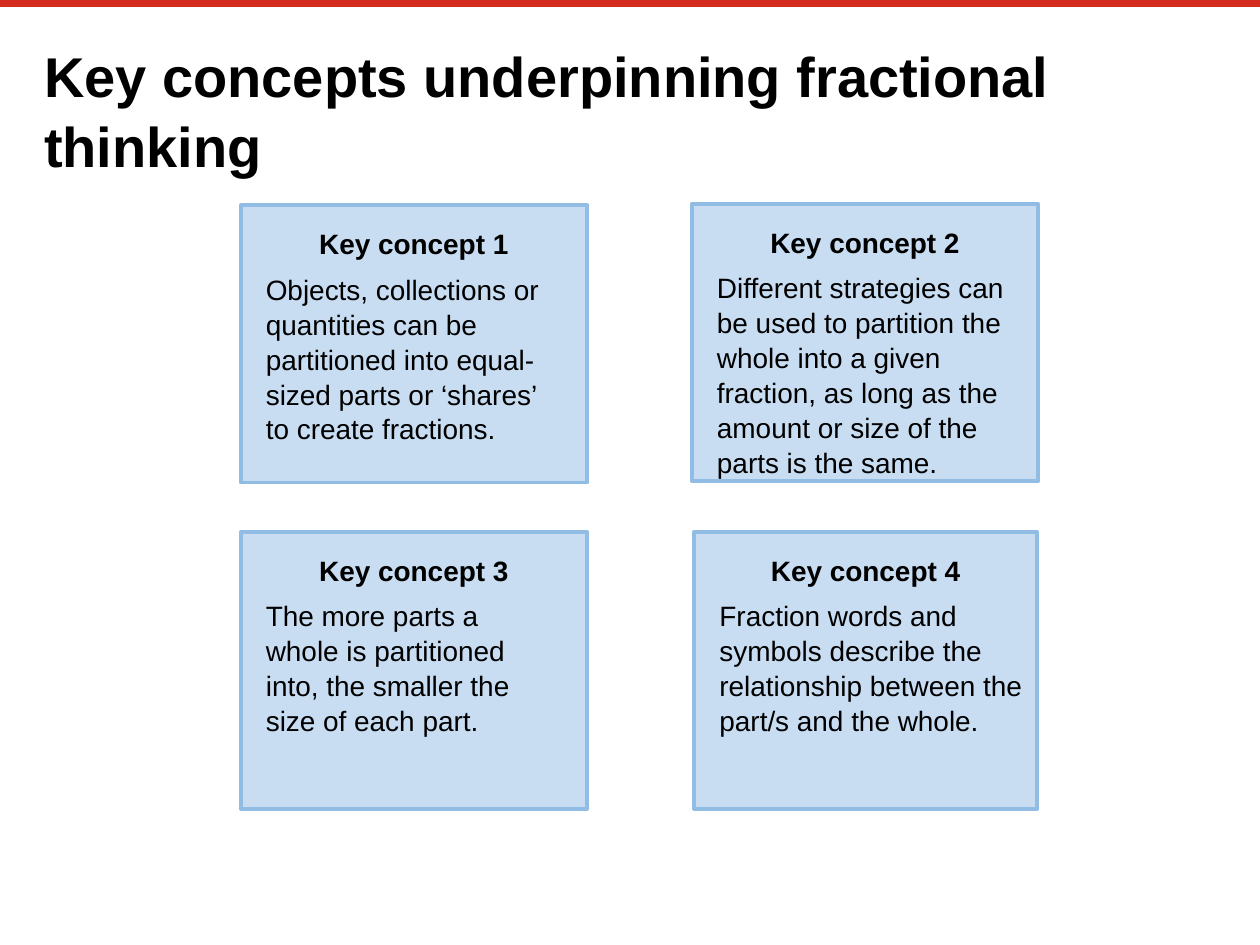
import pptx
import pptx.util
import pptx.dml.color
import pptx.enum.shapes
import pptx.enum.text
from lxml import etree
from pptx.util import Inches

RGBColor = pptx.dml.color.RGBColor
RED = RGBColor(0xD5, 0x2B, 0x1E)
PALE_BLUE = RGBColor(0xC8, 0xDD, 0xF2)
EDGE_BLUE = RGBColor(0x91, 0xBC, 0xE4)
BLACK = RGBColor(0, 0, 0)

FONT = "Arial"
LINE_SPACING = 1.04
A = "{http://schemas.openxmlformats.org/drawingml/2006/main}"

# Left, top, width, height and text of each key concept
BOX_H = 2.2
CONCEPTS = [
    ((1.91, 1.63, 2.75, BOX_H),
     "Objects, collections or quantities can be partitioned into "
     "equal-sized parts or ‘shares’\nto create fractions."),
    ((5.49, 1.62, 2.75, BOX_H),
     "Different strategies can be used to partition the whole into a given "
     "fraction, as long as the amount or size of the parts is the same."),
    ((1.91, 4.22, 2.75, BOX_H),
     "The more parts a\nwhole is partitioned\ninto, the smaller the\n"
     "size of each part."),
    ((5.51, 4.22, 2.72, BOX_H),
     "Fraction words and symbols describe the relationship between the "
     "part/s and the whole."),
]


def place(s, box):
    s.left, s.top, s.width, s.height = (Inches(v) for v in box)


def set_frame(tf, top_inset):
    tf.word_wrap = True
    tf.auto_size = pptx.enum.text.MSO_AUTO_SIZE.NONE
    tf.vertical_anchor = pptx.enum.text.MSO_ANCHOR.TOP
    tf.margin_left = tf.margin_right = tf.margin_bottom = 0
    tf.margin_top = Inches(top_inset)


def write(p, text, size, bold, align, indent=0, before=0):
    pPr = p._p.get_or_add_pPr()
    pPr.set("marL", str(Inches(indent)))
    pPr.set("indent", "0")
    etree.SubElement(pPr, A + "buNone")
    p.alignment = align
    p.line_spacing = LINE_SPACING
    p.space_before = pptx.util.Pt(before)
    for i, line in enumerate(text.split("\n")):
        if i:
            p.add_line_break()
        r = p.add_run()
        r.text = line
        r.font.name = FONT
        r.font.size = pptx.util.Pt(size)
        r.font.bold = bold
        r.font.color.rgb = BLACK


def add_top_rule(slide, y, width):
    rule = slide.shapes.add_connector(
        pptx.enum.shapes.MSO_CONNECTOR.STRAIGHT,
        0, Inches(y), Inches(width), Inches(y))
    rule.line.color.rgb = RED
    rule.line.width = pptx.util.Pt(4.2)
    etree.SubElement(rule._element.spPr, A + "effectLst")


def fill_title(s, box, text):
    place(s, box)
    set_frame(s.text_frame, 0.03)
    write(s.text_frame.paragraphs[0], text, 32, True,
          pptx.enum.text.PP_ALIGN.LEFT)


def fill_concept(s, box, heading, text):
    place(s, box)
    s.shadow.inherit = False
    s.fill.solid()
    s.fill.fore_color.rgb = PALE_BLUE
    s.line.color.rgb = EDGE_BLUE
    s.line.width = pptx.util.Pt(2.25)
    tf = s.text_frame
    set_frame(tf, 0.16)
    write(tf.paragraphs[0], heading, 16, True,
          pptx.enum.text.PP_ALIGN.CENTER)
    write(tf.add_paragraph(), text, 16, False,
          pptx.enum.text.PP_ALIGN.LEFT, indent=0.2, before=6)


def main():
    prs = pptx.Presentation()
    prs.slide_width, prs.slide_height = Inches(10), Inches(7.5)
    slide = prs.slides.add_slide(prs.slide_layouts[1])

    # Red rule and title
    add_top_rule(slide, 0.03, 10)
    fill_title(slide.shapes.title, (0.35, 0.28, 9.29, 0.48),
               "Key concepts underpinning fractional thinking")

    # Key concepts: the first one sits in the body placeholder
    for n, (box, text) in enumerate(CONCEPTS, start=1):
        if n == 1:
            s = slide.placeholders[1]
        else:
            s = slide.shapes.add_shape(
                pptx.enum.shapes.MSO_SHAPE.RECTANGLE, 0, 0, 0, 0)
        fill_concept(s, box, f"Key concept {n}", text)

    prs.save("out.pptx")


if __name__ == "__main__":
    main()
